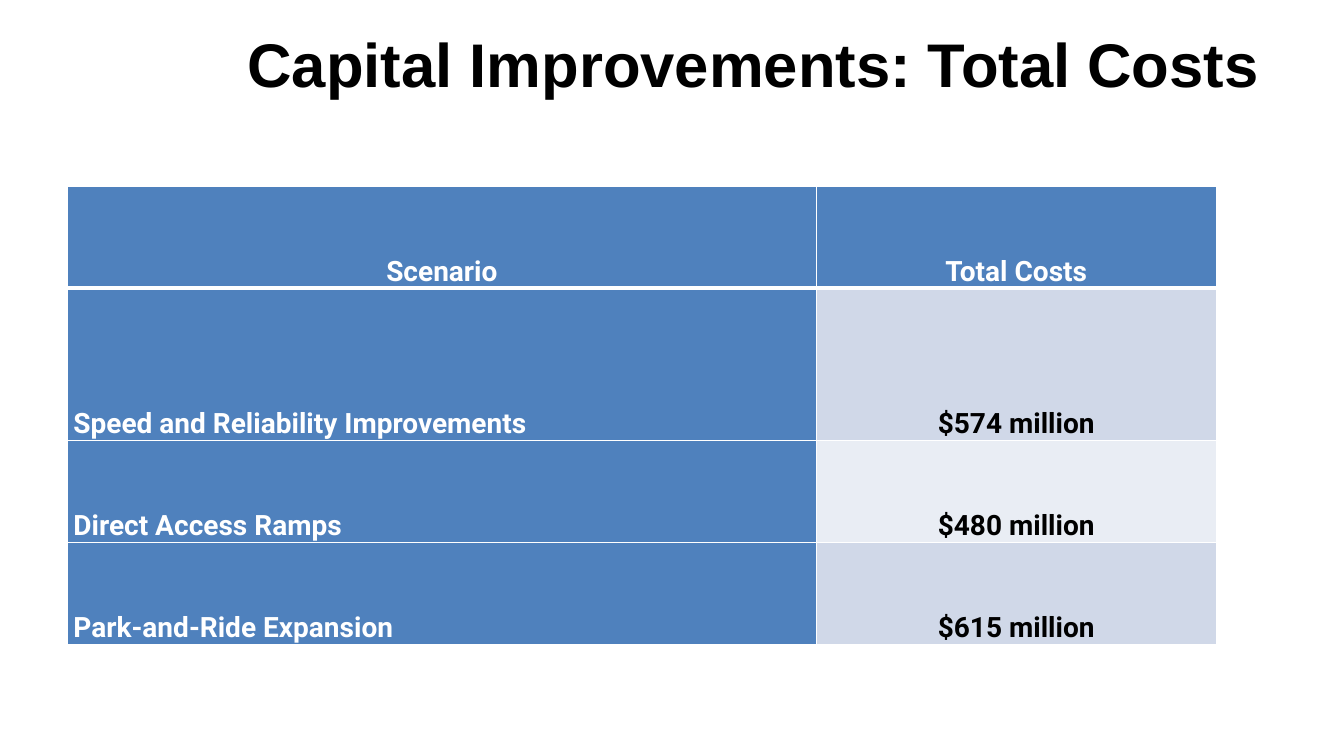
from lxml import etree
from pptx import Presentation
from pptx.dml.color import RGBColor
from pptx.enum import text
from pptx.oxml import ns
from pptx.util import Cm, Pt

BLACK = RGBColor(0x00, 0x00, 0x00)
WHITE = RGBColor(0xFF, 0xFF, 0xFF)
BLUE = RGBColor(0x4F, 0x81, 0xBD)
BAND_DARK = RGBColor(0xD0, 0xD8, 0xE8)
BAND_LIGHT = RGBColor(0xE9, 0xED, 0xF4)

COSTS = [
    ("Scenario", "Total Costs"),
    ("Speed and Reliability Improvements", "$574 million"),
    ("Direct Access Ramps", "$480 million"),
    ("Park-and-Ride Expansion", "$615 million"),
]
COLUMN_SHARES = (0.652, 0.348)
ROW_SHARES = (2, 3, 2, 2)


def format_paragraph(paragraph, font_name, size, color, alignment):
    paragraph.alignment = alignment
    for run in paragraph.runs:
        run.font.name = font_name
        run.font.size = Pt(size)
        run.font.bold = True
        run.font.color.rgb = color


def add_title(slide, left, top, width, height):
    title = slide.shapes.title
    title.left, title.top, title.width, title.height = left, top, width, height
    frame = title.text_frame
    frame.text = "Capital Improvements: Total Costs"
    frame.word_wrap = True
    frame.vertical_anchor = text.MSO_ANCHOR.MIDDLE
    format_paragraph(frame.paragraphs[0], "Arial", 44, BLACK, text.PP_ALIGN.CENTER)


def set_borders(cell, widths):
    properties = cell._tc.get_or_add_tcPr()
    for side, width in widths.items():
        line = etree.SubElement(properties, ns.qn(f"a:ln{side}"), w=str(Pt(width)))
        fill = etree.SubElement(line, ns.qn("a:solidFill"))
        etree.SubElement(fill, ns.qn("a:srgbClr"), val=str(WHITE))


def format_cell(cell, row, column):
    is_heading = row == 0 or column == 0
    set_borders(cell, {"L": 1, "R": 1, "T": 3 if row == 1 else 1, "B": 3 if row == 0 else 1})
    cell.fill.solid()
    if is_heading:
        cell.fill.fore_color.rgb = BLUE
    else:
        cell.fill.fore_color.rgb = BAND_DARK if row % 2 else BAND_LIGHT
    cell.margin_left = cell.margin_right = Cm(0.15)
    cell.margin_top = cell.margin_bottom = 0
    cell.vertical_anchor = text.MSO_ANCHOR.BOTTOM
    paragraph = cell.text_frame.paragraphs[0]
    paragraph.line_spacing = 1.15
    is_scenario = row > 0 and column == 0
    alignment = text.PP_ALIGN.LEFT if is_scenario else text.PP_ALIGN.CENTER
    format_paragraph(paragraph, "Roboto", 20, WHITE if is_heading else BLACK, alignment)


def add_cost_table(slide, left, top, width, height):
    table = slide.shapes.add_table(
        len(COSTS), len(COLUMN_SHARES), left, top, width, height
    ).table
    for column, share in zip(table.columns, COLUMN_SHARES):
        column.width = int(width * share)
    for row, share in zip(table.rows, ROW_SHARES):
        row.height = int(height * share / sum(ROW_SHARES))
    for row, values in enumerate(COSTS):
        for column, value in enumerate(values):
            cell = table.cell(row, column)
            cell.text_frame.text = value
            format_cell(cell, row, column)


def main():
    presentation = Presentation()
    presentation.slide_width = Cm(33.87)
    presentation.slide_height = Cm(19.05)
    slide = presentation.slides.add_slide(presentation.slide_layouts[5])
    add_title(slide, Cm(4.14), Cm(0), Cm(29.72), Cm(3.18))
    add_cost_table(slide, Cm(1.7), Cm(4.7), Cm(28.95), Cm(11.54))
    presentation.save("out.pptx")


if __name__ == "__main__":
    main()
